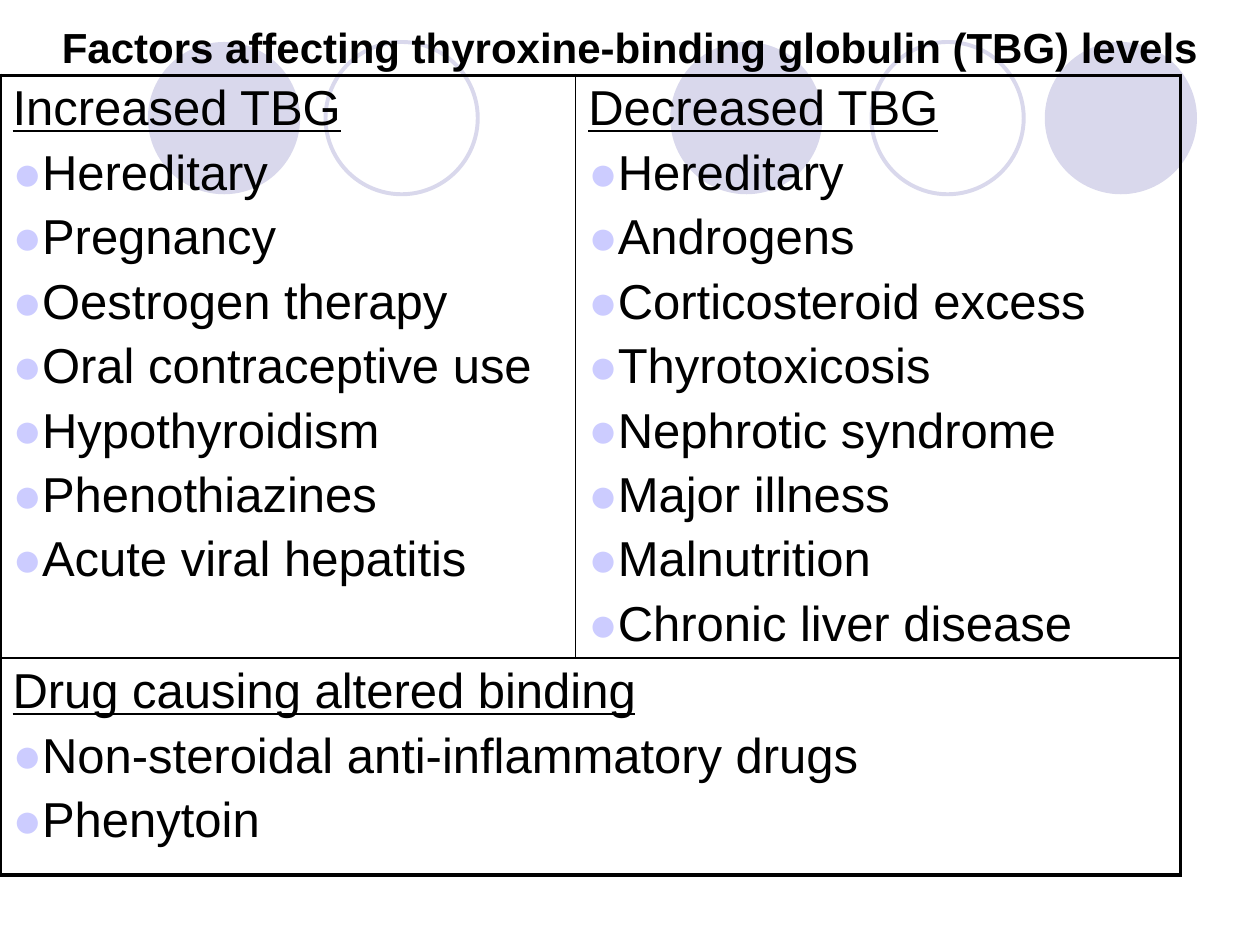
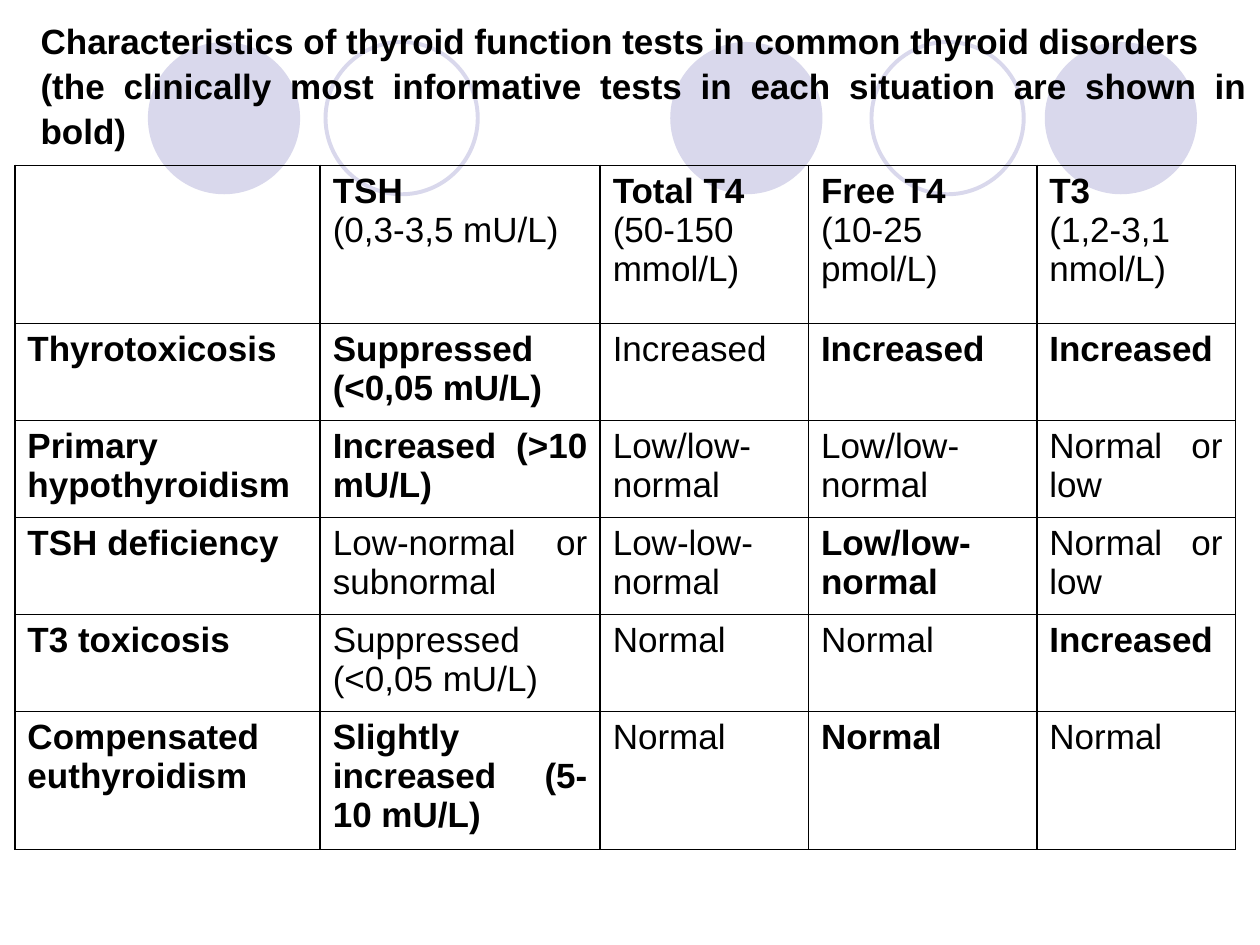
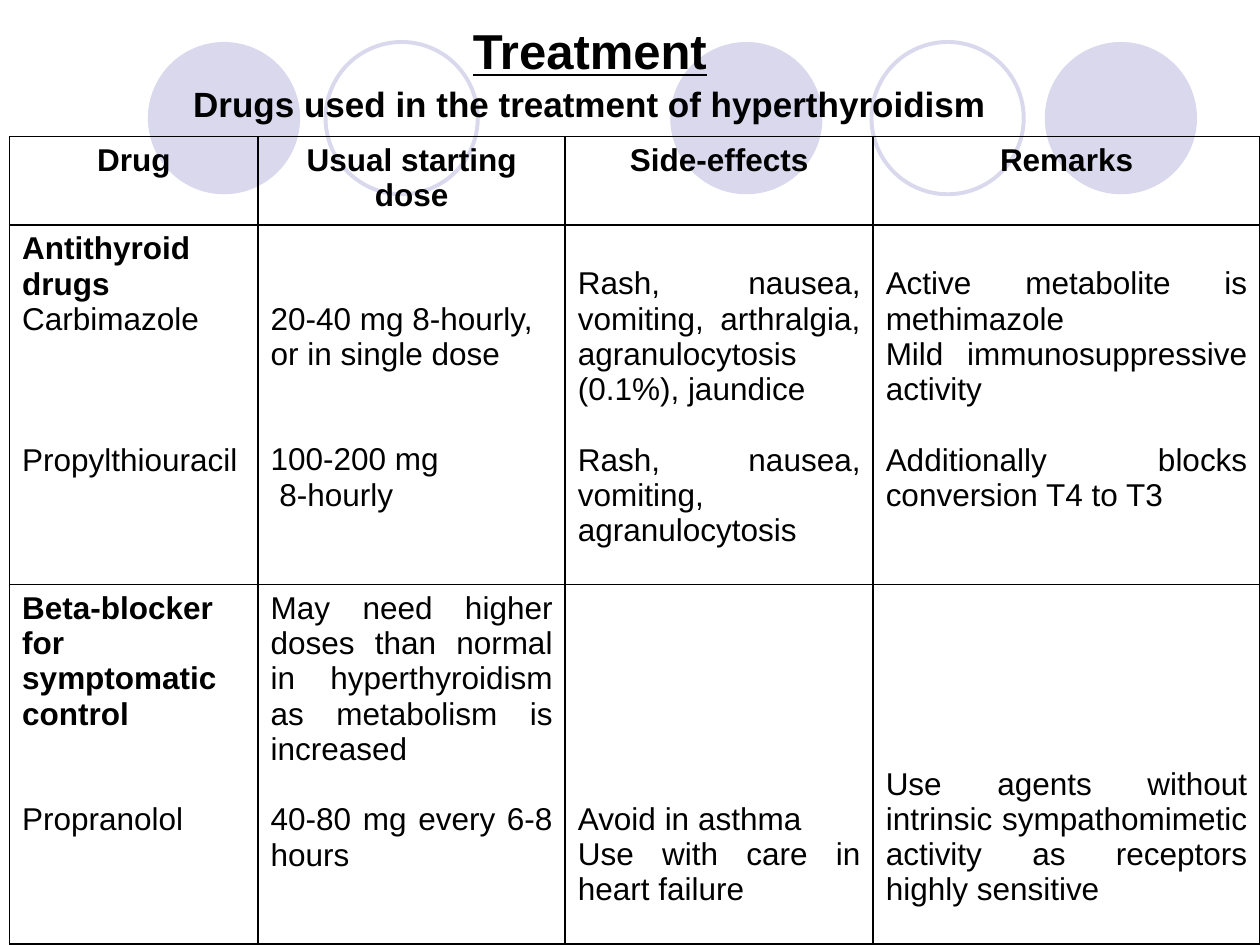
from dataclasses import dataclass
from lxml import etree
from pptx import Presentation
from pptx.dml.color import RGBColor
from pptx.enum import shapes, text
from pptx.oxml import ns
from pptx.util import Pt

ALIGN = text.PP_ALIGN


@dataclass(frozen=True)
class Theme:
    font: str = "Arial"
    ink: str = "000000"
    disc: str = "D9D8EC"
    dot: str = "CCCCFF"
    head: int = 28
    title: int = 24
    sub: int = 20
    body: int = 18
    lead: float = 1.07     # line spacing of titles
    line: float = 1.117    # height of one line of table text, per point of size
    pad: float = 3.6       # top margin of a cell
    thin: float = 1
    thick: float = 2.25


@dataclass(frozen=True)
class Para:
    words: str
    bold: bool = False
    under: bool = False
    dot: bool = False
    gap: float = 0         # empty lines above
    size: int = 0


T = Theme()


def rgb(code):
    return RGBColor.from_string(code)


def sub(node, tag, **attrs):
    return etree.SubElement(node, ns.qn(tag), attrs)


def write(frame, paras, size, align):
    frame.text = "\n".join(p.words for p in paras)
    for spot, (par, item) in enumerate(zip(frame.paragraphs, paras)):
        par.alignment = align
        if spot and item.gap:
            par.space_before = Pt(round(item.gap * size * T.line, 1))
        if item.dot:
            props = par._p.get_or_add_pPr()
            props.set("marL", "0")
            props.set("indent", "0")
            sub(sub(props, "a:buClr"), "a:srgbClr", val=T.dot)
            sub(props, "a:buFont", typeface=T.font)
            sub(props, "a:buChar", char="●")
        for run in par.runs:
            font = run.font
            font.name, font.size = T.font, Pt(item.size or size)
            font.bold, font.underline = item.bold, item.under
            font.color.rgb = rgb(T.ink)


def discs(slide, layout):
    """Put the band of circles on the layout, so that every slide shows it."""
    band = slide.shapes.add_group_shape()
    for left, full in ((383, True), (597, True), (84.5, True), (498, False), (186, False)):
        disc = band.shapes.add_shape(shapes.MSO_SHAPE.OVAL, Pt(left), Pt(24), Pt(87), Pt(87))
        disc.shadow.inherit = False
        if full:
            disc.fill.solid()
            disc.fill.fore_color.rgb = rgb(T.disc)
            disc.line.fill.background()
        else:
            disc.fill.background()
            disc.line.color.rgb = rgb(T.disc)
            disc.line.width = Pt(T.thick)
    layout.shapes.element.append(band.element)


def title(slide, box, paras, size, align=ALIGN.CENTER):
    head = slide.shapes.title
    head.left, head.top, head.width, head.height = map(Pt, box)
    frame = head.text_frame
    frame.word_wrap = True
    frame.auto_size = text.MSO_AUTO_SIZE.NONE
    frame.vertical_anchor = text.MSO_ANCHOR.MIDDLE
    write(frame, paras, size, align)
    for par in frame.paragraphs:
        par.line_spacing = T.lead


def edge(cell, side, width):
    line = sub(cell._tc.get_or_add_tcPr(), f"a:ln{side}", w=str(Pt(width)))
    sub(sub(line, "a:solidFill"), "a:srgbClr", val=T.ink)


def grid(slide, spot, cols, rows, cells, size, align, rim=T.thin):
    """Add a see-through table; a None cell joins the one on its left."""
    frame = slide.shapes.add_table(len(rows), len(cols), *map(Pt, spot),
                                   Pt(sum(cols)), Pt(sum(rows)))
    table = frame.table
    table.first_row = table.horz_banding = False
    table._tbl.tblPr.find(ns.qn("a:tableStyleId")).text = "{2D5ABB26-0587-4C30-8999-92F81FD0307C}"
    for col, width in zip(table.columns, cols):
        col.width = Pt(width)
    for row, height in zip(table.rows, rows):
        row.height = Pt(height)
    for r, line in enumerate(cells):
        for c, paras in enumerate(line):
            if paras is None:
                table.cell(r, c - 1).merge(table.cell(r, c))
    for r, line in enumerate(cells):
        for c, paras in enumerate(line):
            cell = table.cell(r, c)
            ends = {"L": c == 0, "R": c + cell.span_width == len(cols) or paras is None,
                    "T": r == 0, "B": r + 1 == len(rows)}
            for side, last in ends.items():
                if paras is not None or side != "L":
                    edge(cell, side, rim if last else T.thin)
            cell.fill.background()
            if paras:
                cell.margin_top = Pt(round(T.pad + paras[0].gap * size * T.line, 1))
                write(cell.text_frame, paras, size, align)


def mark(words):
    """Lines of a cell; those that start with * are bold."""
    return [Para(w.lstrip("*"), bold=w.startswith("*")) for w in words.split("\n") if w]


def group(name, *items):
    """Underlined name over bulleted items."""
    return [Para(name, under=True)] + [Para(i, dot=True, gap=0.18) for i in items]


def factors(slide):
    title(slide, (0, -19.5, 720, 90),
          [Para("Factors affecting thyroxine-binding globulin (TBG) levels", bold=True)], T.title)
    cells = [
        [group("Increased TBG", "Hereditary", "Pregnancy", "Oestrogen therapy",
               "Oral contraceptive use", "Hypothyroidism", "Phenothiazines",
               "Acute viral hepatitis"),
         group("Decreased TBG", "Hereditary", "Androgens", "Corticosteroid excess",
               "Thyrotoxicosis", "Nephrotic syndrome", "Major illness", "Malnutrition",
               "Chronic liver disease")],
        [group("Drug causing altered binding", "Non-steroidal anti-inflammatory drugs",
               "Phenytoin"), None],
    ]
    grid(slide, (0, 43), (329, 345.5), (333, 124), cells, T.head, ALIGN.LEFT, T.thick)


def tests(slide):
    title(slide, (16, 8, 704, 80),
          mark("*Characteristics of thyroid function tests in common thyroid disorders\n"
               "*(the clinically most informative tests in each situation are shown in bold)"),
          T.sub, ALIGN.JUSTIFY)
    rows = [
        ("", "*TSH\n(0,3-3,5 mU/L)", "*Total T4\n(50-150 mmol/L)",
         "*Free T4\n(10-25 pmol/L)", "*T3\n(1,2-3,1 nmol/L)"),
        ("*Thyrotoxicosis", "*Suppressed (<0,05 mU/L)", "Increased", "*Increased", "*Increased"),
        ("*Primary hypothyroidism", "*Increased (>10 mU/L)", "Low/low-normal",
         "Low/low-normal", "Normal or low"),
        ("*TSH deficiency", "Low-normal or subnormal", "Low-low-normal", "*Low/low-normal",
         "Normal or low"),
        ("*T3 toxicosis", "Suppressed (<0,05 mU/L)", "Normal", "Normal", "*Increased"),
        ("*Compensated euthyroidism", "*Slightly\n*increased (5-10 mU/L)", "Normal",
         "*Normal", "Normal"),
    ]
    cells = [[mark(words) for words in row] for row in rows]
    grid(slide, (8.5, 94.5), (174.5, 160, 119, 130.5, 113.5), (90.5, *[55.4] * 4, 79),
         cells, T.sub, ALIGN.JUSTIFY)


def drugs(slide):
    title(slide, (70.5, 8, 533, 61),
          [Para("Treatment", bold=True, under=True, size=T.head),
           Para("Drugs used in the treatment of hyperthyroidism", bold=True)], T.sub)
    slide.shapes.title.text_frame.margin_bottom = 0
    heads = ("Drug", "Usual starting dose", "Side-effects", "Remarks")
    cells = [
        [mark("*" + name) for name in heads],
        [[Para("Antithyroid drugs", bold=True), Para("Carbimazole"),
          Para("Propylthiouracil", gap=3)],
         [Para("20-40 mg 8-hourly,", gap=2), Para("or in single dose"),
          Para("100-200 mg", gap=2), Para(" 8-hourly")],
         [Para("Rash, nausea, vomiting, arthralgia, agranulocytosis (0.1%), jaundice", gap=1),
          Para("Rash, nausea, vomiting, agranulocytosis", gap=1)],
         [Para("Active metabolite is methimazole", gap=1),
          Para("Mild immunosuppressive activity"),
          Para("Additionally blocks conversion T4 to T3", gap=1)]],
        [[Para("Beta-blocker for symptomatic control", bold=True), Para("Propranolol", gap=2)],
         [Para("May need higher doses than normal in hyperthyroidism as metabolism is increased"),
          Para("40-80 mg every 6-8 hours", gap=1)],
         [Para("Avoid in asthma", gap=6), Para("Use with care in heart failure")],
         [Para("Use agents without intrinsic sympathomimetic activity as receptors "
               "highly sensitive", gap=5)]],
    ]
    grid(slide, (5.5, 78), (142, 175.5, 176, 221), (50.5, 205.5, 205.5),
         cells, T.body, ALIGN.JUSTIFY)
    for cell in slide.shapes[-1].table.rows[0].cells:
        cell.text_frame.paragraphs[0].alignment = ALIGN.CENTER


def main():
    deck = Presentation()
    deck.slide_width, deck.slide_height = Pt(720), Pt(540)
    layout = deck.slide_layouts[5]
    for spot, fill in enumerate((factors, tests, drugs)):
        slide = deck.slides.add_slide(layout)
        if spot == 0:
            discs(slide, layout)
        fill(slide)
    deck.save("out.pptx")


if __name__ == "__main__":
    main()
